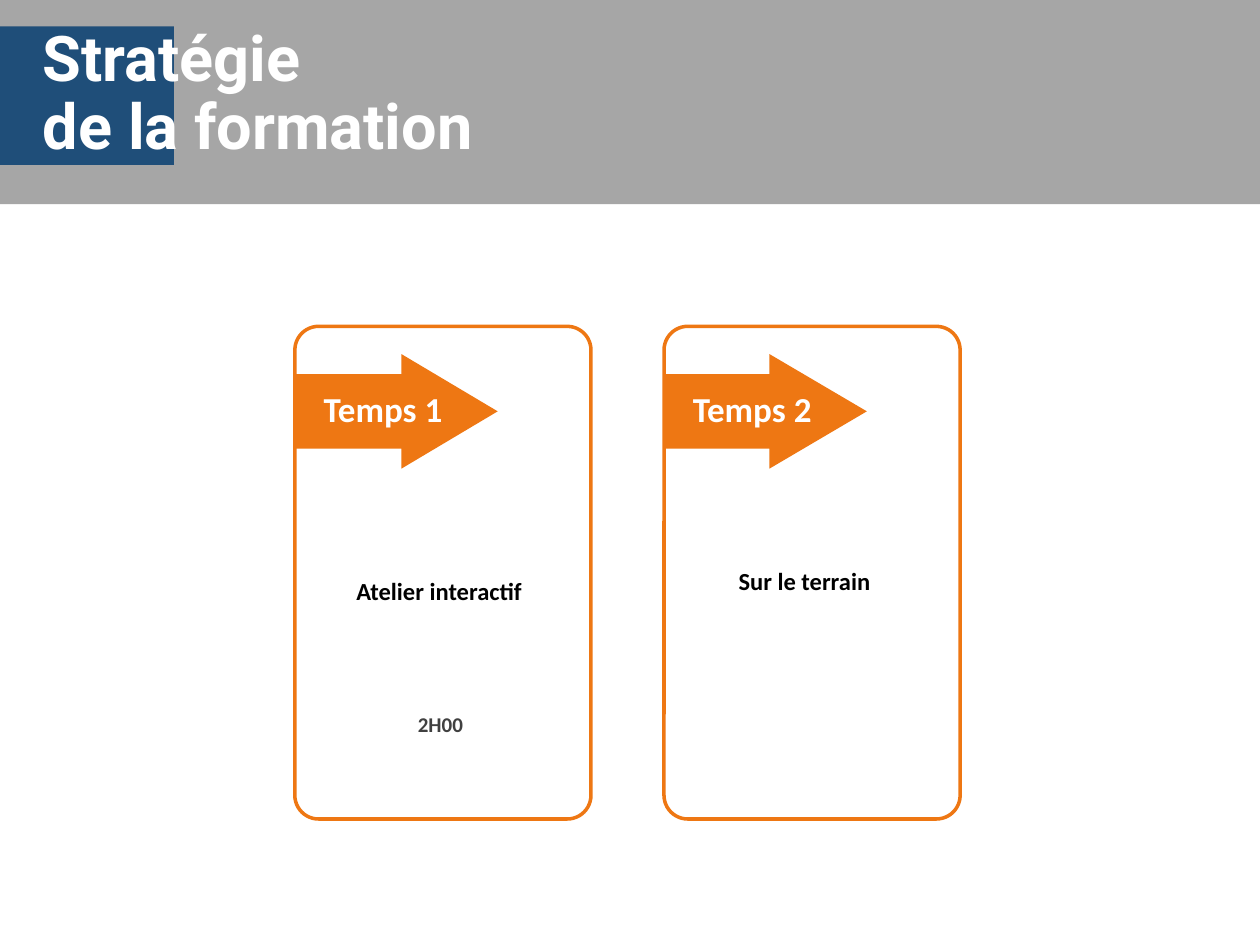
import pptx
import pptx.dml.color
import pptx.enum.shapes
import pptx.enum.text
import pptx.util

Inches = pptx.util.Inches
RGBColor = pptx.dml.color.RGBColor
Shape = pptx.enum.shapes.MSO_SHAPE
Align = pptx.enum.text.PP_ALIGN

GREY = RGBColor(0xA6, 0xA6, 0xA6)
DARK_GREY = RGBColor(0x40, 0x40, 0x40)
BLUE = RGBColor(0x1F, 0x4E, 0x79)
ORANGE = RGBColor(0xEE, 0x77, 0x13)
WHITE = RGBColor(0xFF, 0xFF, 0xFF)
BLACK = RGBColor(0x00, 0x00, 0x00)

CARD_TOP, CARD_WIDTH, CARD_HEIGHT = 2.59, 2.35, 3.91
CARD_LEFT, CARD_STEP = 2.34, 2.93
CARDS = [
    ("Temps 1", 0.84, [("Atelier interactif", 0.25, 1.93, 0.54, 14, BLACK),
                       ("2H00", 0.26, 3.01, 0.3, 12, DARK_GREY)]),
    ("Temps 2", 0.85, [("Sur le terrain", 0.22, 1.85, 0.74, 14, BLACK)]),
]


def add_filled_shape(slide, kind, box, fill, line=None):
    """Add a flat preset shape with an optional outline."""
    shape = slide.shapes.add_shape(kind, *map(Inches, box))
    shape.shadow.inherit = False
    shape.fill.solid()
    shape.fill.fore_color.rgb = fill
    if line is None:
        shape.line.fill.background()
    else:
        shape.line.color.rgb = line
        shape.line.width = pptx.util.Pt(2)
    return shape


def add_run(paragraph, text, font_name, size, color):
    """Add a bold run to a paragraph."""
    run = paragraph.add_run()
    run.text = text
    run.font.name = font_name
    run.font.size = pptx.util.Pt(size)
    run.font.bold = True
    run.font.color.rgb = color


def add_label(slide, box, text, size, color):
    """Add a centred one-line text box."""
    frame = slide.shapes.add_textbox(*map(Inches, box)).text_frame
    frame.word_wrap = True
    paragraph = frame.paragraphs[0]
    paragraph.alignment = Align.CENTER
    add_run(paragraph, text, "Calibri", size, color)


def add_header(slide, left, top, width, height):
    """Draw the header band, its accent block and the title."""
    add_filled_shape(slide, Shape.RECTANGLE, (left, top, width, height), GREY)
    add_filled_shape(slide, Shape.RECTANGLE, (left, top + 0.21, 1.38, 1.1), BLUE)
    title = slide.shapes.title
    title.left, title.top = Inches(left), Inches(top + 0.13)
    title.width, title.height = Inches(9), Inches(1.25)
    slide.shapes.element.append(title.element)
    frame = title.text_frame
    frame.auto_size = pptx.enum.text.MSO_AUTO_SIZE.NONE
    frame.vertical_anchor = pptx.enum.text.MSO_ANCHOR.MIDDLE
    frame.margin_left = Inches(0.34)
    paragraph = frame.paragraphs[0]
    paragraph.alignment = Align.LEFT
    paragraph.line_spacing = 0.9
    add_run(paragraph, "Stratégie", "Roboto", 36, WHITE)
    paragraph.add_line_break()
    add_run(paragraph, "de la formation", "Roboto", 36, WHITE)


def add_card(slide, left, top, width, height, heading, head_length, labels):
    """Draw a rounded card with an arrow heading and its labels."""
    card = add_filled_shape(slide, Shape.ROUNDED_RECTANGLE,
                            (left, top, width, height), WHITE, ORANGE)
    card.adjustments[0] = 0.08
    for text, offset_x, offset_y, label_height, size, color in labels:
        box = (left + offset_x, top + offset_y, 1.79, label_height)
        add_label(slide, box, text, size, color)
    arrow = add_filled_shape(slide, Shape.RIGHT_ARROW,
                             (left, top + 0.22, 1.61, 0.91), ORANGE)
    arrow.adjustments[0] = 0.65
    arrow.adjustments[1] = head_length
    add_label(slide, (left - 0.47, top + 0.44, 2.34, 0.44), heading, 20, WHITE)


def main():
    """Build and save the presentation."""
    presentation = pptx.Presentation()
    presentation.slide_width = Inches(10)
    presentation.slide_height = Inches(7.5)
    slide = presentation.slides.add_slide(presentation.slide_layouts[5])
    add_header(slide, 0, 0, 10, 1.62)
    for index, (heading, head_length, labels) in enumerate(CARDS):
        add_card(slide, CARD_LEFT + index * CARD_STEP, CARD_TOP, CARD_WIDTH,
                 CARD_HEIGHT, heading, head_length, labels)
    presentation.save("out.pptx")


if __name__ == "__main__":
    main()
